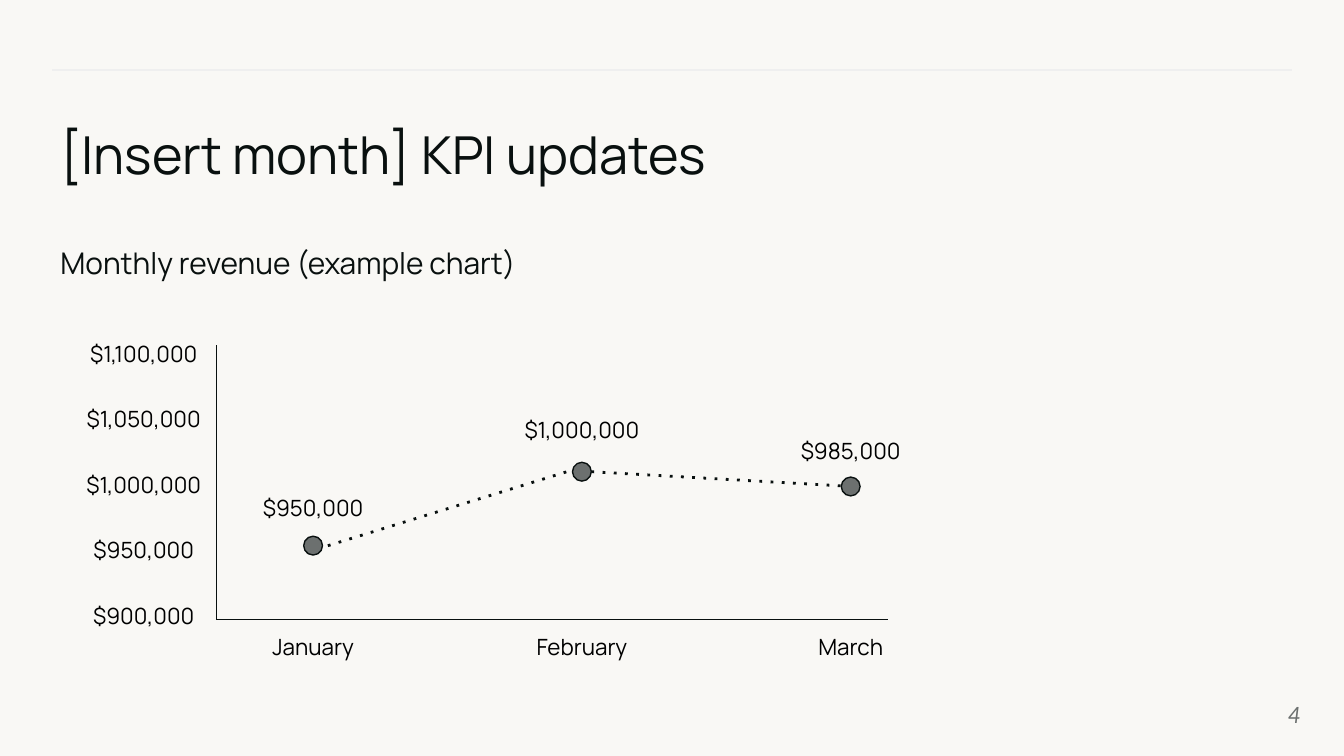
from lxml.etree import SubElement
from pptx import Presentation
from pptx.dml.color import RGBColor
from pptx.enum.shapes import MSO_CONNECTOR, MSO_SHAPE
from pptx.enum.text import MSO_ANCHOR, PP_ALIGN
from pptx.oxml.ns import qn
from pptx.util import Inches, Pt

TITLE = "[Insert month] KPI updates"
SUBTITLE = "Monthly revenue (example chart)"
PAGE_NUMBER = "4"
AXIS_LABELS = ["$1,100,000", "$1,050,000", "$1,000,000", "$950,000", "$900,000"]
# month, revenue label, height of the dot's centre, top of the revenue label
MONTHS = [
    ("January", "$950,000", 4.06, 3.58),
    ("February", "$1,000,000", 3.51, 3.00),
    ("March", "$985,000", 3.62, 3.15),
]
# dotted links between neighbouring dots: x1, y1, x2, y2
LINKS = [(2.28, 4.11, 4.38, 3.46), (4.40, 3.51, 6.34, 3.62)]

INK, GREY, RULE, PAPER, BLACK = "09100F", "6C706F", "EFEFEF", "F9F8F5", "000000"
SLIDE_W = 10
SLIDE_H = SLIDE_W * 9 / 16
AXIS_X, AXIS_TOP, AXIS_Y, AXIS_RIGHT = 1.61, 2.57, 4.61, 6.61
LABEL_W, LABEL_H = 1.11, 0.4
SCALE_CENTRE, SCALE_TOP, SCALE_BOTTOM = 1.07, 2.43, 4.38
SCALE_STEP = (SCALE_BOTTOM - SCALE_TOP) / (len(AXIS_LABELS) - 1)
MONTH_X, MONTH_STEP = 2.33, 2.0
DOT = 0.14


def colour(value):
    return RGBColor.from_string(value)


def add_text(slide, text, left, top, width, height, size, fill=INK, font="Manrope",
             align=PP_ALIGN.LEFT, anchor=MSO_ANCHOR.TOP, inset=0, italic=None):
    frame = slide.shapes.add_textbox(
        Inches(left), Inches(top), Inches(width), Inches(height)).text_frame
    frame.word_wrap = True
    frame.vertical_anchor = anchor
    frame.margin_left = frame.margin_right = Inches(inset)
    frame.margin_top = frame.margin_bottom = Inches(inset)
    paragraph = frame.paragraphs[0]
    paragraph.alignment = align
    run = paragraph.add_run()
    run.text = text
    run.font.name = font
    run.font.size = Pt(size)
    run.font.italic = italic
    run.font.color.rgb = colour(fill)


def add_label(slide, text, centre, top):
    """Chart label centred on a given x."""
    add_text(slide, text, centre - LABEL_W / 2, top, LABEL_W, LABEL_H, 12,
             BLACK, align=PP_ALIGN.CENTER, inset=0.1)


def add_line(slide, x1, y1, x2, y2, stroke=INK, weight=0.75, dotted=False):
    line = slide.shapes.add_connector(
        MSO_CONNECTOR.STRAIGHT, Inches(x1), Inches(y1), Inches(x2), Inches(y2))
    line.line.color.rgb = colour(stroke)
    line.line.width = Pt(weight)
    properties = line._element.spPr
    if dotted:
        SubElement(properties.find(qn("a:ln")), qn("a:prstDash"), val="dot")
    SubElement(properties, qn("a:effectLst"))


def add_dot(slide, x, y):
    dot = slide.shapes.add_shape(
        MSO_SHAPE.OVAL, Inches(x - DOT / 2), Inches(y - DOT / 2), Inches(DOT), Inches(DOT))
    dot.shadow.inherit = False
    dot.fill.solid()
    dot.fill.fore_color.rgb = colour(GREY)
    dot.line.color.rgb = colour(INK)
    dot.line.width = Pt(0.75)


def add_revenue_chart(slide):
    add_line(slide, AXIS_X, AXIS_Y, AXIS_RIGHT, AXIS_Y)
    add_line(slide, AXIS_X, AXIS_TOP, AXIS_X, AXIS_Y)
    for row, amount in enumerate(AXIS_LABELS):
        add_label(slide, amount, SCALE_CENTRE, SCALE_TOP + row * SCALE_STEP)
    for link in LINKS:
        add_line(slide, *link, weight=1.5, dotted=True)
    for column, (month, revenue, dot_y, revenue_top) in enumerate(MONTHS):
        x = MONTH_X + column * MONTH_STEP
        add_dot(slide, x, dot_y)
        add_label(slide, month, x, AXIS_Y)
        add_label(slide, revenue, x, revenue_top)


def main():
    deck = Presentation()
    deck.slide_width, deck.slide_height = Inches(SLIDE_W), Inches(SLIDE_H)
    slide = deck.slides.add_slide(deck.slide_layouts[6])
    slide.background.fill.solid()
    slide.background.fill.fore_color.rgb = colour(PAPER)

    add_line(slide, 9.61, 0.52, 0.39, 0.52, RULE)
    add_text(slide, TITLE, 0.45, 0.91, 5.34, 0.51, 28)
    add_text(slide, SUBTITLE, 0.45, 1.82, 4.5, 0.24, 16)
    add_revenue_chart(slide)
    add_text(slide, PAGE_NUMBER, 9.08, 5.1, 0.6, 0.43, 12, GREY, "Lato",
             PP_ALIGN.RIGHT, MSO_ANCHOR.MIDDLE, italic=True)
    deck.save("out.pptx")


if __name__ == "__main__":
    main()
